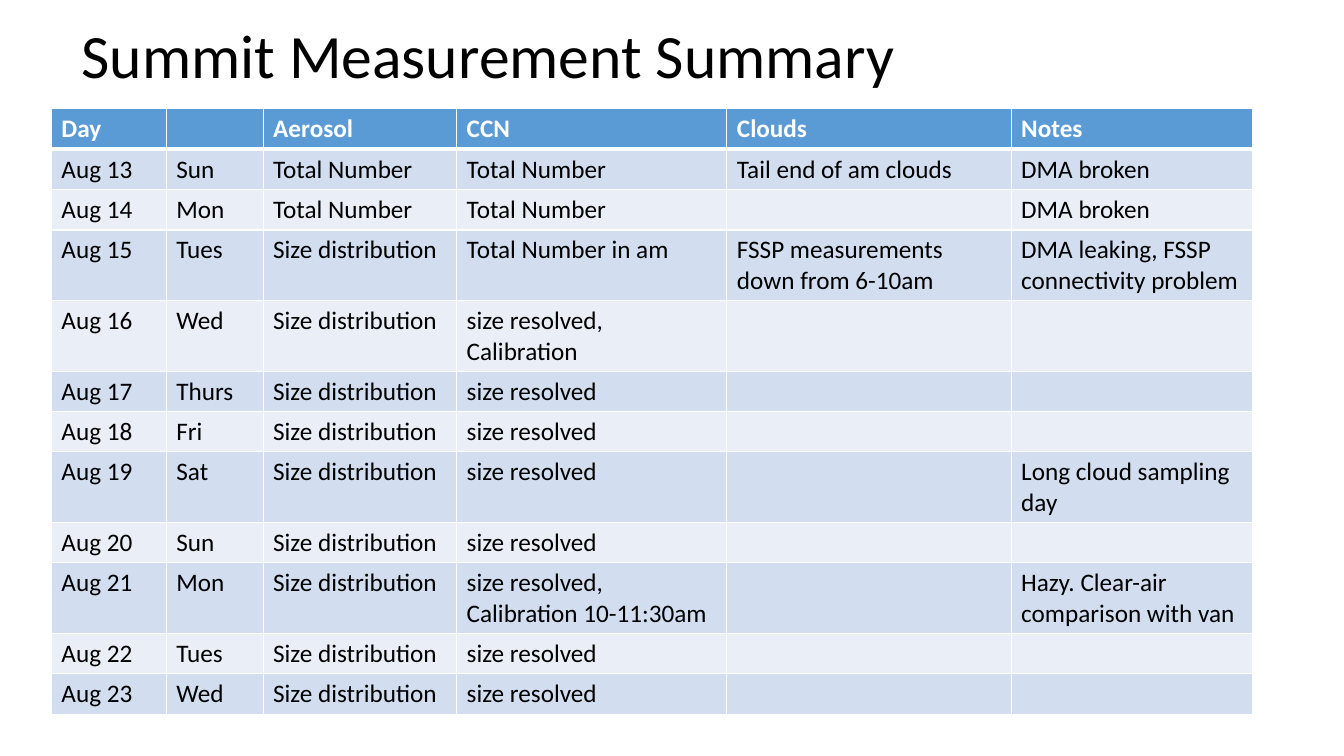
"""Build the Summit Measurement Summary slide."""
from pptx import Presentation
from pptx.dml.color import RGBColor
from pptx.enum.text import MSO_ANCHOR
from pptx.oxml import parse_xml
from pptx.oxml.ns import nsdecls
from pptx.util import Inches, Pt

TITLE = "Summit Measurement Summary"
HEADER = ("Day", "", "Aerosol", "CCN", "Clouds", "Notes")
TOTAL, SIZE, RESOLVED = "Total Number", "Size distribution", "size resolved"
DAYS = [
    ("Aug 13", "Sun", TOTAL, TOTAL, "Tail end of am clouds", "DMA broken"),
    ("Aug 14", "Mon", TOTAL, TOTAL, "", "DMA broken"),
    ("Aug 15", "Tues", SIZE, "Total Number in am", "FSSP measurements down from 6-10am",
     "DMA leaking, FSSP connectivity problem"),
    ("Aug 16", "Wed", SIZE, "size resolved, Calibration", "", ""),
    ("Aug 17", "Thurs", SIZE, RESOLVED, "", ""),
    ("Aug 18", "Fri", SIZE, RESOLVED, "", ""),
    ("Aug 19", "Sat", SIZE, RESOLVED, "", "Long cloud sampling day"),
    ("Aug 20", "Sun", SIZE, RESOLVED, "", ""),
    ("Aug 21", "Mon", SIZE, "size resolved, Calibration 10-11:30am", "",
     "Hazy. Clear-air comparison with van"),
    ("Aug 22", "Tues", SIZE, RESOLVED, "", ""),
    ("Aug 23", "Wed", SIZE, RESOLVED, "", ""),
]
COLUMN_WIDTHS = (1.14, 0.96, 1.92, 2.68, 2.82, 2.39)
ROW_HEIGHT = 0.37
HEADER_FILL, BANDS = "5B9BD5", ("D2DEEF", "EAEFF7")
TITLE_FORMAT = {"size": Pt(44), "bold": False}
HEADER_FORMAT = {"size": Pt(18), "bold": True}
BODY_FORMAT = {"size": Pt(18), "bold": False}


def rgb(value):
    return RGBColor.from_string(value)


def write(p, text, color, formats):
    r = p.add_run()
    r.text = text
    for name, value in {"name": "Calibri", **formats}.items():
        setattr(r.font, name, value)
    r.font.color.rgb = rgb(color)


def add_border(cell, side, width):
    cell._tc.get_or_add_tcPr().append(parse_xml(
        f'<a:ln{side} {nsdecls("a")} w="{Pt(width)}"><a:solidFill>'
        f'<a:srgbClr val="FFFFFF"/></a:solidFill></a:ln{side}>'))


def fill_cell(cell, row, text):
    for side in "LRTB":
        header_rule = (row, side) in ((0, "B"), (1, "T"))
        add_border(cell, side, 3 if header_rule else 1)
    cell.fill.solid()
    cell.fill.fore_color.rgb = rgb(BANDS[(row - 1) % 2] if row else HEADER_FILL)
    p = cell.text_frame.paragraphs[0]
    if text:
        write(p, text, "000000" if row else "FFFFFF", BODY_FORMAT if row else HEADER_FORMAT)
    else:
        p.font.size = Pt(18)


def add_title(s):
    tf = s.shapes.add_textbox(Inches(0.71), Inches(0.09), Inches(11.5), Inches(0.99)).text_frame
    tf.word_wrap = True
    tf.vertical_anchor = MSO_ANCHOR.MIDDLE
    p = tf.paragraphs[0]
    p.line_spacing = 0.9
    write(p, TITLE, "000000", TITLE_FORMAT)


def add_summary(s):
    rows = [HEADER, *DAYS]
    table = s.shapes.add_table(
        len(rows), len(HEADER), Inches(0.51), Inches(1.08),
        Inches(sum(COLUMN_WIDTHS)), Inches(ROW_HEIGHT * len(rows))).table
    for column, width in zip(table.columns, COLUMN_WIDTHS):
        column.width = Inches(width)
    for i, texts in enumerate(rows):
        table.rows[i].height = Inches(ROW_HEIGHT)
        for j, text in enumerate(texts):
            fill_cell(table.cell(i, j), i, text)


def main():
    prs = Presentation()
    prs.slide_width, prs.slide_height = Inches(13.33), Inches(7.5)
    s = prs.slides.add_slide(prs.slide_layouts[6])
    add_title(s)
    add_summary(s)
    prs.save("out.pptx")


if __name__ == "__main__":
    main()
